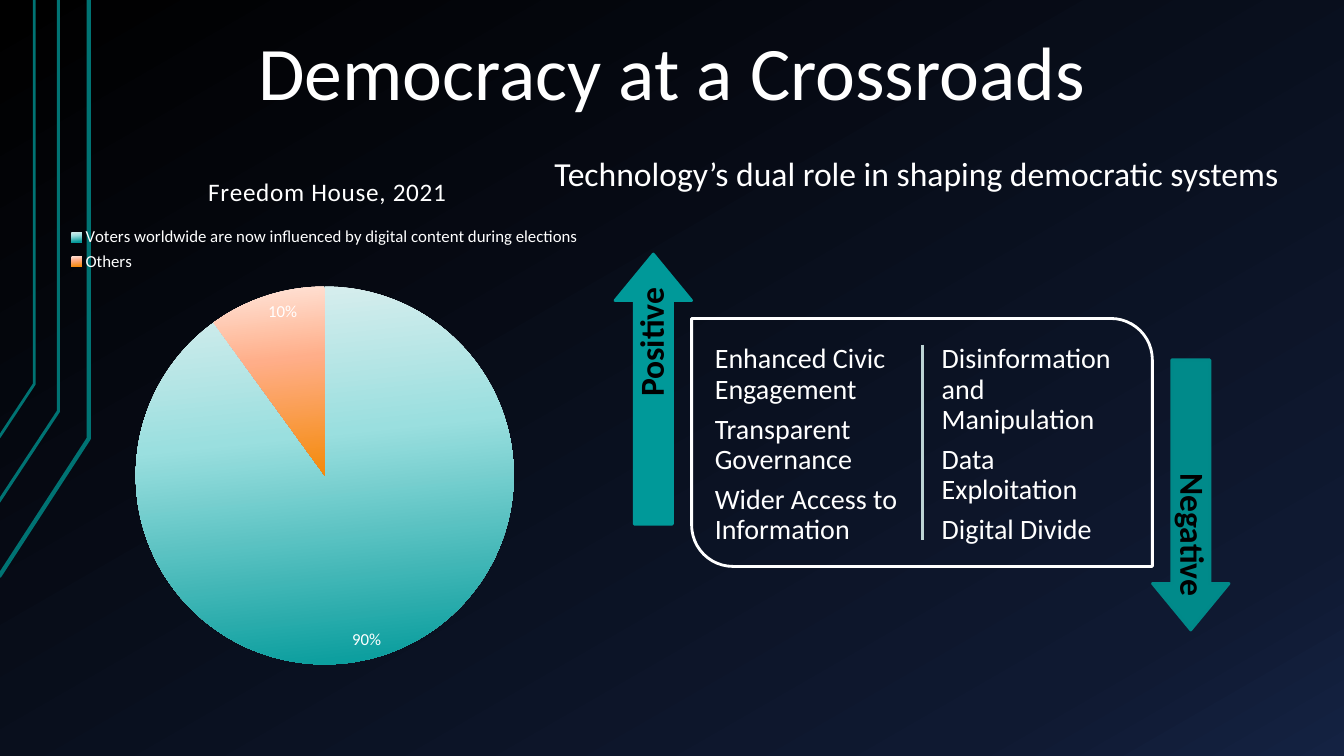
from dataclasses import dataclass

from lxml.etree import SubElement
from pptx import Presentation
from pptx.chart.data import CategoryChartData
from pptx.dml.color import RGBColor
from pptx.enum.chart import XL_CHART_TYPE, XL_LABEL_POSITION, XL_LEGEND_POSITION
from pptx.enum.shapes import MSO_CONNECTOR, MSO_SHAPE
from pptx.enum.text import MSO_ANCHOR, MSO_AUTO_SIZE, PP_ALIGN
from pptx.oxml import parse_xml
from pptx.oxml.ns import nsdecls, qn
from pptx.util import Inches, Pt


@dataclass(frozen=True)
class Theme:
    font: str = "Calibri"
    white: str = "FFFFFF"
    black: str = "000000"
    trace: str = "007373"
    divider: str = "BDD4D4"
    background: tuple = ((0, "000000"), (85, "0F1931"), (100, "142242"))
    slices: tuple = (
        ((0, "DEEFEF"), (40, "9ADFDF"), (100, "009999")),
        ((0, "FFE5DA"), (40, "FFAE89"), (100, "F48A0A")),
    )
    title_size: int = 54
    heading_size: int = 24
    body_size: int = 20
    chart_title_size: int = 18
    chart_size: int = 12


THEME = Theme()
TITLE = "Democracy at a Crossroads"
SUBTITLE = "Technology’s dual role in shaping democratic systems"
CHART_TITLE = "Freedom House, 2021"
SHARES = [
    ("Voters worldwide are now influenced by digital content during elections", 90),
    ("Others", 10),
]
EFFECTS = [
    (7.01, ["Enhanced Civic Engagement", "Transparent Governance", "Wider Access to Information"]),
    (9.26, ["Disinformation and Manipulation", "Data Exploitation", "Digital Divide"]),
]
ARROWS = [
    ("Positive", 270, (5.14, 3.48), (5.25, 3.79), "009999", "009999"),
    ("Negative", 90, (10.47, 4.53), (10.59, 4.6), "008A8A", "008989"),
]
TRACES = [
    (3, [(-0.01, 5.72), (0.88, 4.35), (0.88, 0)]),
    (2.25, [(-0.02, 4.99), (0.58, 4.08), (0.58, 0)]),
    (2, [(-0.01, 4.34), (0.34, 3.81), (0.34, 0)]),
]


def color(value):
    return RGBColor.from_string(value)


def inches(*values):
    return [Inches(value) for value in values]


def set_font(font, size, value=THEME.white, bold=False):
    font.name = THEME.font
    font.size = Pt(size)
    font.bold = bold
    font.color.rgb = color(value)


def set_line(line, value, width):
    line.color.rgb = color(value)
    line.width = Pt(width)


def set_gradient(fill, host, stops, angle):
    fill.gradient()
    gradient = list(host.iter(qn("a:gradFill")))[-1]
    for child in list(gradient):
        gradient.remove(child)
    stop_list = SubElement(gradient, qn("a:gsLst"))
    for position, value in stops:
        stop = SubElement(stop_list, qn("a:gs"), pos=str(position * 1000))
        SubElement(stop, qn("a:srgbClr"), val=value)
    SubElement(gradient, qn("a:lin"), ang=str(angle * 60000), scaled="0")


def set_layout(parent, before, **factors):
    for layout in parent.findall(qn("c:layout")):
        parent.remove(layout)
    modes = '<c:xMode val="edge"/><c:yMode val="edge"/>'
    target = '<c:layoutTarget val="inner"/>' if before is None else ""
    sizes = "".join(f'<c:{name} val="{value}"/>' for name, value in factors.items())
    layout = parse_xml(
        f'<c:layout {nsdecls("c")}><c:manualLayout>{target}{modes}{sizes}</c:manualLayout></c:layout>'
    )
    if before is None:
        parent.insert(0, layout)
    else:
        parent.find(qn(before)).addnext(layout)


def add_text(slide, box, lines, size, value=THEME.white, bold=False, inset=None,
             align=PP_ALIGN.LEFT, anchor=MSO_ANCHOR.TOP, spacing=None, after=0):
    shape = slide.shapes.add_textbox(*inches(*box))
    frame = shape.text_frame
    frame.word_wrap = True
    frame.vertical_anchor = anchor
    if inset is not None:
        frame.margin_left = frame.margin_right = Inches(inset)
        frame.margin_top = frame.margin_bottom = Inches(inset)
    frame.text = "\n".join(lines)
    for paragraph in frame.paragraphs:
        paragraph.alignment = align
        paragraph.line_spacing = spacing
        paragraph.space_after = Pt(after)
        set_font(paragraph.font, size, value, bold)
    return shape


def add_traces(slide):
    for width, points in TRACES:
        start, *rest = [inches(*point) for point in points]
        builder = slide.shapes.build_freeform(*start)
        builder.add_line_segments(rest, close=False)
        shape = builder.convert_to_shape()
        shape.shadow.inherit = False
        shape.fill.background()
        set_line(shape.line, THEME.trace, width)


def add_title(slide):
    title = slide.shapes.title
    title.left, title.top, title.width, title.height = inches(1.66, 0.54, 10.01, 0.69)
    frame = title.text_frame
    frame.text = TITLE
    frame.auto_size = MSO_AUTO_SIZE.NONE
    frame.vertical_anchor = MSO_ANCHOR.BOTTOM
    frame.margin_left = frame.margin_right = Inches(0.13)
    frame.margin_top = frame.margin_bottom = Inches(0.07)
    paragraph = frame.paragraphs[0]
    paragraph.alignment = PP_ALIGN.CENTER
    paragraph.line_spacing = 0.9
    set_font(paragraph.font, THEME.title_size)


def add_share_chart(slide):
    data = CategoryChartData()
    data.categories = [name for name, _ in SHARES]
    data.add_series("Series 1", [value for _, value in SHARES])
    box = inches(0.52, 1.47, 5.35, 5.28)
    chart = slide.shapes.add_chart(XL_CHART_TYPE.PIE, *box, data).chart
    set_font(chart.font, THEME.chart_size)

    chart.has_title = True
    frame = chart.chart_title.text_frame
    frame.text = CHART_TITLE
    run = frame.paragraphs[0].runs[0]
    set_font(run.font, THEME.chart_title_size)
    run.font._element.set("spc", "50")
    set_layout(chart.chart_title._element, "c:tx", x=0.28, y=0.04)

    chart.has_legend = True
    legend = chart.legend
    legend.position = XL_LEGEND_POSITION.TOP
    legend.include_in_layout = False
    set_font(legend.font, THEME.chart_size)
    set_layout(legend._element, "c:legendPos", x=0.02, y=0.14, w=0.97, h=0.1)

    plot = chart.plots[0]
    plot.vary_by_categories = True
    set_layout(plot._element.getparent(), None, x=0.15, y=0.26, w=0.71, h=0.71)
    series = plot.series[0]
    for index, stops in enumerate(THEME.slices):
        set_gradient(series.points[index].format.fill, series._element, stops, 84)
    plot.has_data_labels = True
    labels = plot.data_labels
    labels.show_value = False
    labels.show_percentage = True
    labels.position = XL_LABEL_POSITION.INSIDE_END
    set_font(labels.font, THEME.chart_size)


def add_effects(slide):
    panel = slide.shapes.add_shape(MSO_SHAPE.ROUND_2_DIAG_RECTANGLE, *inches(6.86, 3.16, 4.57, 2.46))
    panel.adjustments[0], panel.adjustments[1] = 0, 0.167
    panel.shadow.inherit = False
    panel.fill.background()
    set_line(panel.line, THEME.white, 2)

    divider = slide.shapes.add_connector(MSO_CONNECTOR.STRAIGHT, *inches(9.15, 3.42, 9.15, 5.36))
    set_line(divider.line, THEME.divider, 2)
    SubElement(divider._element.spPr, qn("a:effectLst"))

    for left, lines in EFFECTS:
        add_text(slide, (left, 3.34, 1.98, 2.09), lines, THEME.body_size, inset=0.08, spacing=0.9, after=7)

    for label, rotation, arrow_place, label_place, fill, outline in ARROWS:
        arrow = slide.shapes.add_shape(MSO_SHAPE.RIGHT_ARROW, *inches(*arrow_place, 2.68, 0.76))
        arrow.adjustments[0], arrow.adjustments[1] = 0.498, 0.607
        arrow.rotation = rotation
        arrow.shadow.inherit = False
        arrow.fill.solid()
        arrow.fill.fore_color.rgb = color(fill)
        set_line(arrow.line, outline, 2)
        caption = add_text(slide, (*label_place, 2.45, 0.38), [label], THEME.heading_size, THEME.black, True,
                           0.1, PP_ALIGN.RIGHT, MSO_ANCHOR.MIDDLE, 0.9)
        caption.rotation = rotation


def main():
    presentation = Presentation()
    presentation.slide_width, presentation.slide_height = inches(13.33, 7.5)
    slide = presentation.slides.add_slide(presentation.slide_layouts[5])
    set_gradient(slide.background.fill, slide._element, THEME.background, 60)
    add_traces(slide)
    add_title(slide)
    add_text(slide, (5.4, 1.47, 7.48, 0.5), [SUBTITLE], THEME.heading_size)
    add_share_chart(slide)
    add_effects(slide)
    presentation.save("out.pptx")


if __name__ == "__main__":
    main()
